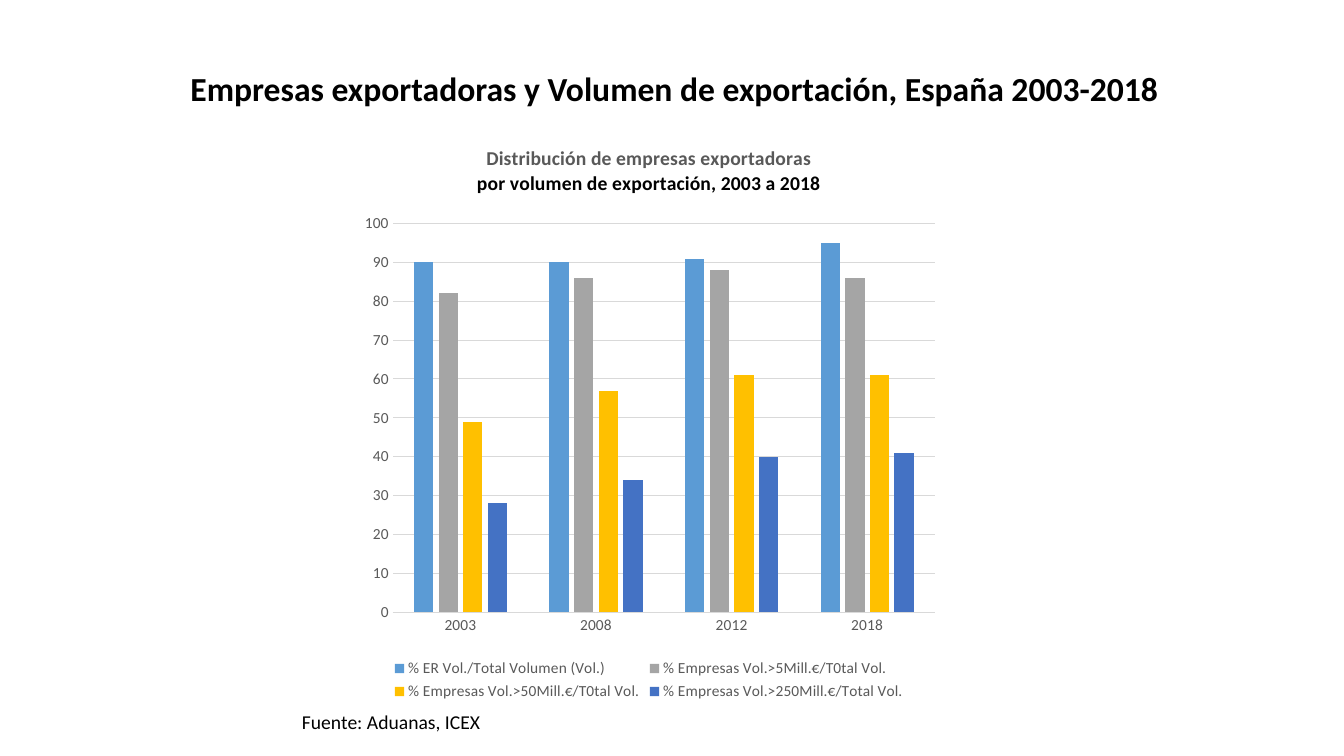
"""Build the slide on Spanish exporting companies by export volume, 2003 to 2018."""
from lxml import etree
from pptx import Presentation
from pptx.chart.data import CategoryChartData
from pptx.dml.color import RGBColor
from pptx.enum.chart import XL_CHART_TYPE, XL_LEGEND_POSITION, XL_TICK_MARK
from pptx.enum.text import MSO_AUTO_SIZE, PP_ALIGN
from pptx.oxml.ns import qn
from pptx.util import Pt

PX = 914400 / 100.8
FONT = "Calibri"
BLACK = RGBColor(0x00, 0x00, 0x00)
GRAY = RGBColor(0x59, 0x59, 0x59)
LIGHT_GRAY = RGBColor(0xD9, 0xD9, 0xD9)
CLUSTERED = XL_CHART_TYPE.COLUMN_CLUSTERED
BOTTOM = XL_LEGEND_POSITION.BOTTOM
NO_TICK = XL_TICK_MARK.NONE
CENTER = PP_ALIGN.CENTER
LEFT = PP_ALIGN.LEFT
GROW = MSO_AUTO_SIZE.SHAPE_TO_FIT_TEXT

YEARS = ["2003", "2008", "2012", "2018"]
SERIES = [
    ("% ER Vol./Total Volumen (Vol.)", [90, 90, 91, 95], RGBColor(0x5B, 0x9B, 0xD5)),
    ("% Empresas Vol.>5Mill.€/T0tal Vol.", [82, 86, 88, 86], RGBColor(0xA5, 0xA5, 0xA5)),
    ("% Empresas Vol.>50Mill.€/T0tal Vol.", [49, 57, 61, 61], RGBColor(0xFF, 0xC0, 0x00)),
    ("% Empresas Vol.>250Mill.€/Total Vol.", [28, 34, 40, 41], RGBColor(0x44, 0x72, 0xC4)),
]
TEXTS = [
    ("Empresas exportadoras y Volumen de exportación, España 2003-2018",
     (148, 60, 1053, 53), 24, True,
     {"alignment": CENTER, "line_spacing": 1.07, "space_after": Pt(8)}),
    ("Fuente: Aduanas, ICEX", (292, 705, 298, 34), 14, False, {"alignment": LEFT}),
]
CHART_TITLE = [
    ("Distribución de empresas exportadoras", GRAY),
    ("por volumen de exportación, 2003 a 2018", BLACK),
]
PLOT_LAYOUT = {
    "layoutTarget": "inner", "xMode": "edge", "yMode": "edge",
    "x": 0.07, "y": 0.17, "w": 0.91, "h": 0.67,
}


def to_emu(box):
    return [round(length * PX) for length in box]


def set_font(font, size, color, bold=False):
    values = {"name": FONT, "size": Pt(size), "bold": bold}
    for name, value in values.items():
        setattr(font, name, value)
    font.color.rgb = color


presentation = Presentation()
presentation.slide_width, presentation.slide_height = to_emu((1344, 756))
slide = presentation.slides.add_slide(presentation.slide_layouts[6])

for text, box, size, bold, paragraph_format in TEXTS:
    text_frame = slide.shapes.add_textbox(*to_emu(box)).text_frame
    text_frame.word_wrap = True
    text_frame.auto_size = GROW
    paragraph = text_frame.paragraphs[0]
    for name, value in paragraph_format.items():
        setattr(paragraph, name, value)
    run = paragraph.add_run()
    run.text = text
    set_font(run.font, size, BLACK, bold)

chart_data = CategoryChartData()
chart_data.categories = YEARS
for name, values, color in SERIES:
    chart_data.add_series(name, values)
chart = slide.shapes.add_chart(CLUSTERED, *to_emu((351, 125, 596, 580)), chart_data).chart
set_font(chart.font, 10, BLACK)

chart.has_title = True
title_frame = chart.chart_title.text_frame
for index, (text, color) in enumerate(CHART_TITLE):
    paragraph = title_frame.add_paragraph() if index else title_frame.paragraphs[0]
    paragraph.alignment = CENTER
    run = paragraph.add_run()
    run.text = text
    set_font(run.font, 14, color, True)
chart.chart_title.include_in_layout = False

chart.has_legend = True
chart.legend.position = BOTTOM
chart.legend.include_in_layout = False
set_font(chart.legend.font, 11, GRAY)

plot = chart.plots[0]
plot.gap_width = 219
plot.overlap = -27
plot.vary_by_categories = False
for series, (name, values, color) in zip(plot.series, SERIES):
    series.format.fill.solid()
    series.format.fill.fore_color.rgb = color
    series.invert_if_negative = False

category_axis, value_axis = chart.category_axis, chart.value_axis
for axis in (category_axis, value_axis):
    axis.major_tick_mark = NO_TICK
    axis.minor_tick_mark = NO_TICK
    set_font(axis.tick_labels.font, 11, GRAY)
value_axis.minimum_scale = 0
value_axis.maximum_scale = 100
value_axis.major_unit = 10
value_axis.has_major_gridlines = True
value_axis.format.line.fill.background()
for line in (category_axis.format.line, value_axis.major_gridlines.format.line):
    line.color.rgb = LIGHT_GRAY
    line.width = Pt(0.75)

plot_area = chart.element.find(".//" + qn("c:plotArea"))
layout = plot_area.find(qn("c:layout"))
if layout is None:
    layout = etree.Element(qn("c:layout"))
    plot_area.insert(0, layout)
manual_layout = etree.SubElement(layout, qn("c:manualLayout"))
for name, value in PLOT_LAYOUT.items():
    etree.SubElement(manual_layout, qn("c:" + name)).set("val", str(value))

presentation.save("out.pptx")
